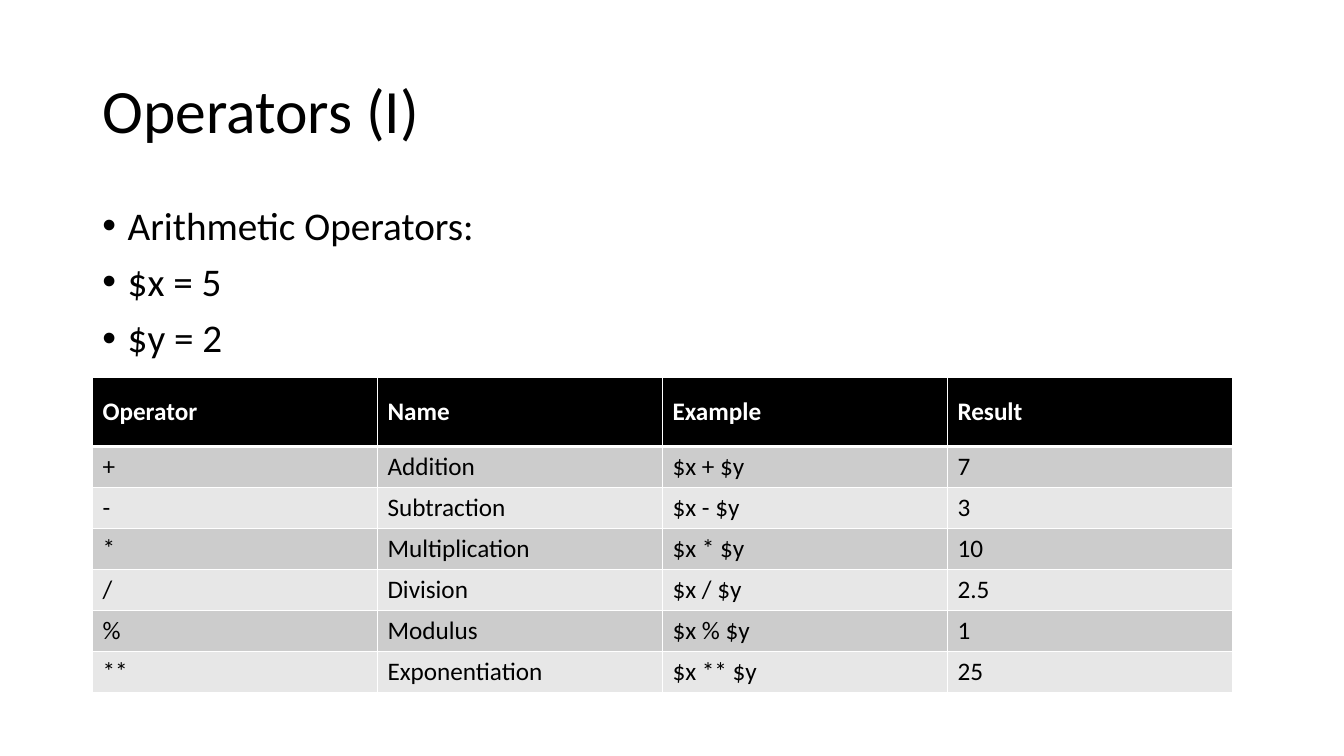
from lxml.etree import SubElement
from pptx import Presentation
from pptx.dml.color import RGBColor
from pptx.enum.text import MSO_ANCHOR
from pptx.oxml.ns import qn
from pptx.util import Cm, Pt

FONT = "Calibri"
COLORS = {
    "text": "000000",
    "header": "000000",
    "header_text": "FFFFFF",
    "odd_row": "CCCCCC",
    "even_row": "E7E7E7",
    "border": "FFFFFF",
}
TITLE = "Operators (I)"
BULLETS = ["Arithmetic Operators:", "$x = 5", "$y = 2"]
OPERATORS = [
    ("Operator", "Name", "Example", "Result"),
    ("+", "Addition", "$x + $y", "7"),
    ("-", "Subtraction", "$x - $y", "3"),
    ("*", "Multiplication", "$x * $y", "10"),
    ("/", "Division", "$x / $y", "2.5"),
    ("%", "Modulus", "$x % $y", "1"),
    ("**", "Exponentiation", "$x ** $y", "25"),
]


def add_run(paragraph, text, size, color="text", bold=False):
    run = paragraph.add_run()
    run.text = text
    run.font.name = FONT
    run.font.size = Pt(size)
    run.font.bold = bold
    run.font.color.rgb = RGBColor.from_string(COLORS[color])


def add_text_frame(slide, box, anchor):
    text_frame = slide.shapes.add_textbox(*box).text_frame
    text_frame.word_wrap = True
    text_frame.vertical_anchor = anchor
    return text_frame


def add_title(slide, box):
    paragraph = add_text_frame(slide, box, MSO_ANCHOR.MIDDLE).paragraphs[0]
    paragraph.line_spacing = 0.9
    add_run(paragraph, TITLE, 44)


def add_bullets(slide, box):
    text_frame = add_text_frame(slide, box, MSO_ANCHOR.TOP)
    for index, text in enumerate(BULLETS):
        paragraph = text_frame.add_paragraph() if index else text_frame.paragraphs[0]
        paragraph.line_spacing = 0.9
        paragraph.space_before = Pt(10)
        properties = paragraph._p.get_or_add_pPr()
        indent = Cm(0.64)
        properties.set("marL", str(indent))
        properties.set("indent", str(-indent))
        SubElement(properties, qn("a:buFont"), typeface="Arial")
        SubElement(properties, qn("a:buChar"), char="•")
        add_run(paragraph, text, 28)


def add_borders(cell, widths):
    properties = cell._tc.get_or_add_tcPr()
    for side, width in widths.items():
        line = SubElement(properties, qn(f"a:ln{side}"), w=str(Pt(width)))
        fill = SubElement(line, qn("a:solidFill"))
        SubElement(fill, qn("a:srgbClr"), val=COLORS["border"])


def add_operator_table(slide, box):
    left, top, width, height = box
    column_count = len(OPERATORS[0])
    table = slide.shapes.add_table(len(OPERATORS), column_count, *box).table
    header_height = Cm(1.75)
    row_height = (height - header_height) // (len(OPERATORS) - 1)
    for column in table.columns:
        column.width = width // column_count
    for row_index, values in enumerate(OPERATORS):
        is_header = row_index == 0
        table.rows[row_index].height = header_height if is_header else row_height
        fill = "header" if is_header else "odd_row" if row_index % 2 else "even_row"
        borders = {"L": 1, "R": 1, "T": 3 if row_index == 1 else 1, "B": 3 if is_header else 1}
        for column_index, text in enumerate(values):
            cell = table.cell(row_index, column_index)
            add_borders(cell, borders)
            cell.fill.solid()
            cell.fill.fore_color.rgb = RGBColor.from_string(COLORS[fill])
            cell.vertical_anchor = MSO_ANCHOR.MIDDLE if is_header else MSO_ANCHOR.TOP
            color = "header_text" if is_header else "text"
            add_run(cell.text_frame.paragraphs[0], text, 18, color, is_header)


def main():
    presentation = Presentation()
    presentation.slide_width = Cm(33.87)
    presentation.slide_height = Cm(19.05)
    slide = presentation.slides.add_slide(presentation.slide_layouts[6])
    left = Cm(2.33)
    add_title(slide, (left, Cm(1.01), Cm(29.21), Cm(3.68)))
    add_bullets(slide, (left, Cm(5.07), Cm(29.21), Cm(12.09)))
    add_operator_table(slide, (left, Cm(9.5), Cm(28.73), Cm(7.95)))
    presentation.save("out.pptx")


if __name__ == "__main__":
    main()
